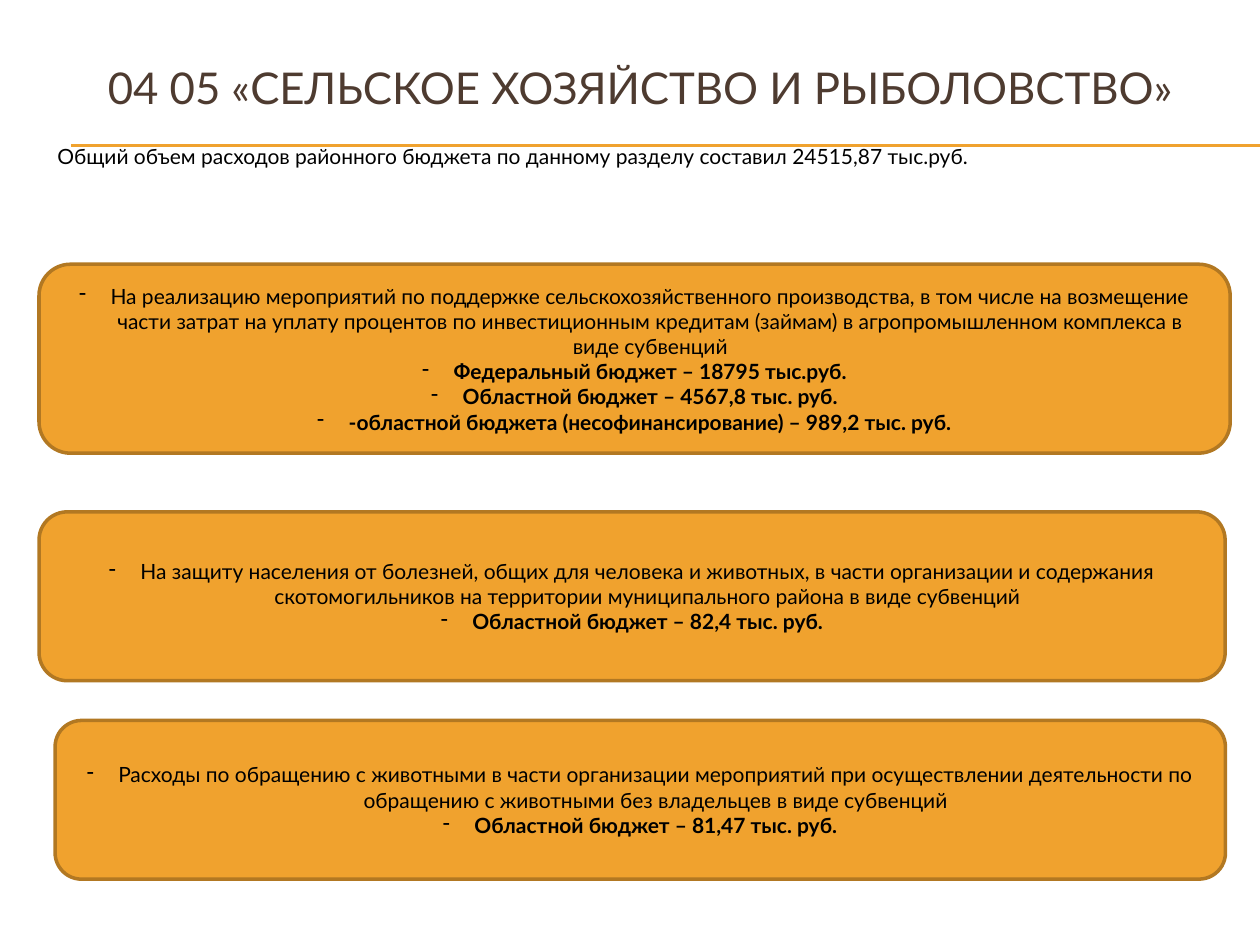
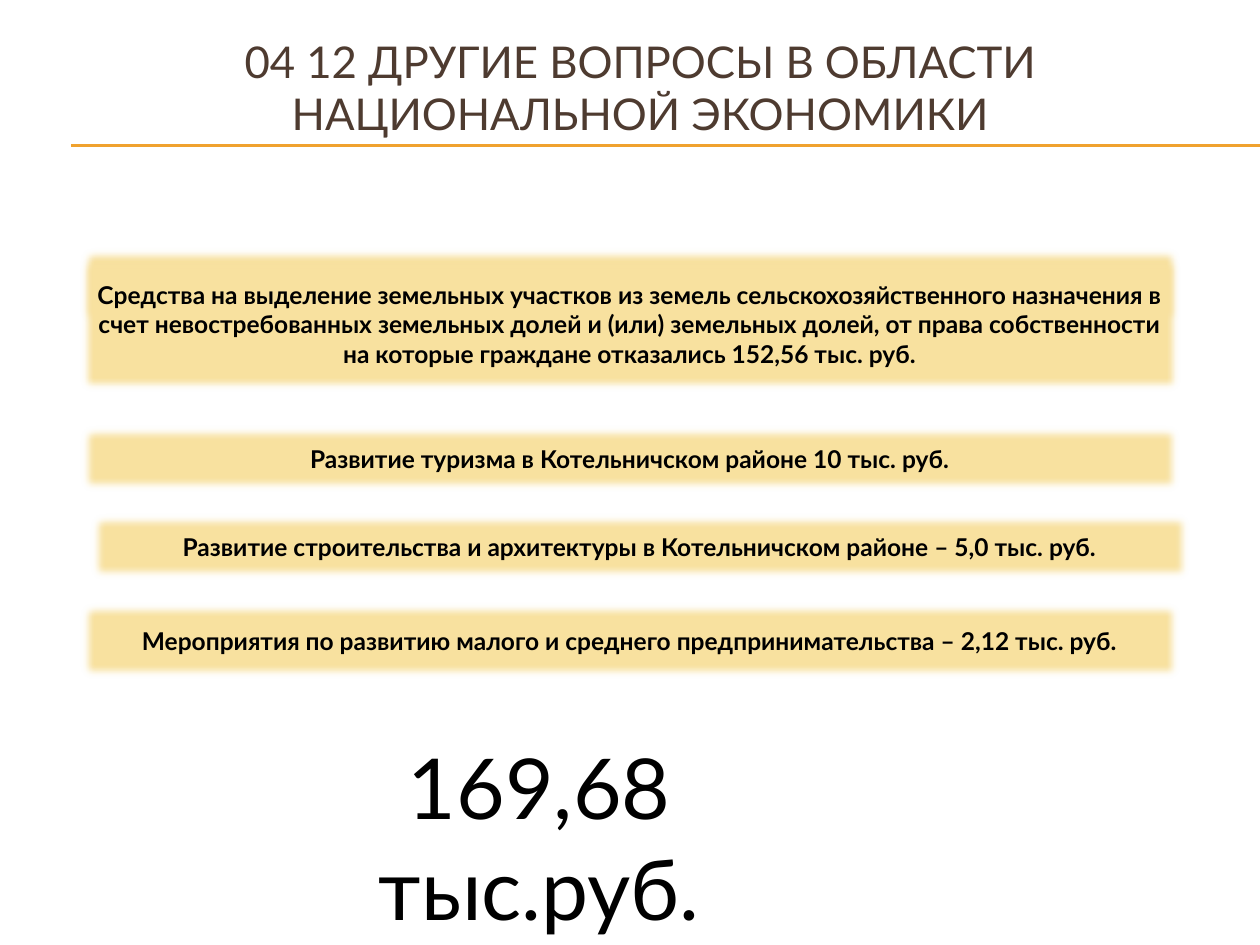
from dataclasses import dataclass

from lxml.etree import SubElement
from pptx import Presentation
from pptx.dml.color import RGBColor
from pptx.enum.shapes import MSO_CONNECTOR, MSO_SHAPE
from pptx.enum.text import MSO_ANCHOR, PP_ALIGN
from pptx.oxml.ns import qn
from pptx.util import Pt

FONT = "Lato"
BLACK, BROWN = "000000", "4E3B30"
AMBER, DARK_AMBER, SAND = "F0A22E", "B27822", "F8E19F"
SLIDE_W, SLIDE_H = 720, 540
RULE_LEFT, RULE_TOPS = 40.5, (82.8, 83.5)
TITLE_BOX = (23.8, 16.6, 684, 66.2)
BULLET_INDENT = 18
SOFT_EDGE = 5


@dataclass
class Card:
    """Rounded card: an expense item and the budgets that pay for it."""
    box: tuple[float, float, float, float]
    purpose: str
    budgets: list[str]


@dataclass
class Strip:
    """Soft-edged strip with one bold line of text."""
    left: float
    top: float
    height: float
    text: str = ""
    width: float = 630


CARDS = [
    Card((22.3, 151, 680.7, 108),
         "На реализацию мероприятий по поддержке сельскохозяйственного производства, "
         "в том числе на возмещение части затрат на уплату процентов по инвестиционным "
         "кредитам (займам) в агропромышленном комплекса в виде субвенций",
         ["Федеральный бюджет – 18795 тыс.руб.",
          "Областной бюджет – 4567,8 тыс. руб.",
          "-областной бюджета (несофинансирование) – 989,2 тыс. руб."]),
    Card((22.3, 292.5, 677.8, 96.5),
         "На защиту населения от болезней, общих для человека и животных, в части "
         "организации и содержания скотомогильников на территории муниципального "
         "района в виде субвенций",
         ["Областной бюджет – 82,4 тыс. руб."]),
    Card((31.5, 411.7, 668.8, 90.7),
         "Расходы по обращению с животными в части организации мероприятий при "
         "осуществлении деятельности по обращению с животными без владельцев в виде "
         "субвенций",
         ["Областной бюджет – 81,47 тыс. руб."]),
]

STRIPS = [
    Strip(44.9, 140.6, 45.2),
    Strip(50.6, 292.3, 39.7,
          "Развитие строительства и архитектуры в Котельничском районе – 5,0 тыс. руб."),
    Strip(44.9, 343.6, 45.2,
          "Мероприятия по развитию малого и среднего предпринимательства – 2,12 тыс. руб."),
    Strip(44.9, 242, 39.7, "Развитие туризма в Котельничском районе 10 тыс. руб."),
    Strip(44.9, 146, 78.5,
          "Средства на выделение земельных участков из земель сельскохозяйственного "
          "назначения в счет невостребованных земельных долей и (или) земельных долей, "
          "от права собственности на которые граждане отказались 152,56 тыс. руб."),
]


def rgb(color: str) -> RGBColor:
    return RGBColor.from_string(color)


def write(p, text: str, size: float, color: str = BLACK, bold: bool = False,
          align=PP_ALIGN.CENTER) -> None:
    p.alignment = align
    r = p.add_run()
    r.text = text
    for name, value in {"name": FONT, "size": Pt(size), "bold": bold}.items():
        setattr(r.font, name, value)
    r.font.color.rgb = rgb(color)


def add_bullet(p) -> None:
    pPr = p._p.get_or_add_pPr()
    pPr.set("marL", str(Pt(BULLET_INDENT)))
    pPr.set("indent", str(-Pt(BULLET_INDENT)))
    SubElement(pPr, qn("a:buFontTx"))
    SubElement(pPr, qn("a:buChar"), char="-")


def add_text(s, box, text: str, size: float, anchor=MSO_ANCHOR.MIDDLE, **style):
    tf = s.shapes.add_textbox(*map(Pt, box)).text_frame
    tf.word_wrap = True
    tf.vertical_anchor = anchor
    write(tf.paragraphs[0], text, size, **style)
    return tf.paragraphs[0]


def add_box(s, kind, box, fill: str, line_width: float):
    sp = s.shapes.add_shape(kind, *map(Pt, box))
    sp.shadow.inherit = False
    sp.fill.solid()
    sp.fill.fore_color.rgb = rgb(fill)
    sp.line.color.rgb = rgb(DARK_AMBER)
    sp.line.width = Pt(line_width)
    sp.text_frame.word_wrap = True
    sp.text_frame.vertical_anchor = MSO_ANCHOR.MIDDLE
    return sp


def add_card(s, card: Card) -> None:
    tf = add_box(s, MSO_SHAPE.ROUNDED_RECTANGLE, card.box, AMBER, 2).text_frame
    for i, text in enumerate([card.purpose, *card.budgets]):
        p = tf.add_paragraph() if i else tf.paragraphs[0]
        add_bullet(p)
        write(p, text, 12, bold=i > 0)


def add_strip(s, strip: Strip) -> None:
    box = (strip.left, strip.top, strip.width, strip.height)
    sp = add_box(s, MSO_SHAPE.RECTANGLE, box, SAND, 0.25)
    effects = sp._element.spPr.find(qn("a:effectLst"))
    SubElement(effects, qn("a:softEdge"), rad=str(Pt(SOFT_EDGE)))
    if strip.text:
        write(sp.text_frame.paragraphs[0], strip.text, 14, bold=True)


def add_titled_slide(prs, title: str):
    """Blank slide with the double rule and the title above it."""
    s = prs.slides.add_slide(prs.slide_layouts[6])
    for top in RULE_TOPS:
        rule = s.shapes.add_connector(MSO_CONNECTOR.STRAIGHT, Pt(RULE_LEFT), Pt(top),
                                      Pt(SLIDE_W), Pt(top))
        rule.line.color.rgb = rgb(AMBER)
        rule.line.width = Pt(0.75)
        SubElement(rule._element.spPr, qn("a:effectLst"))
    add_text(s, TITLE_BOX, title, 25, color=BROWN)
    return s


def main() -> None:
    prs = Presentation()
    prs.slide_width, prs.slide_height = Pt(SLIDE_W), Pt(SLIDE_H)

    # Agriculture: total and expense cards
    s = add_titled_slide(prs, "04 05 «СЕЛЬСКОЕ ХОЗЯЙСТВО И РЫБОЛОВСТВО»")
    p = add_text(s, (11.5, 78.5, 697.7, 21.6),
                 "Общий объем расходов районного бюджета по данному разделу "
                 "составил 24515,87 тыс.руб.", 12, align=PP_ALIGN.JUSTIFY)
    p._p.get_or_add_pPr().set("indent", str(Pt(14.2)))
    for card in CARDS:
        add_card(s, card)

    # Other economic matters: strips and their total
    s = add_titled_slide(prs, "04 12 ДРУГИЕ ВОПРОСЫ В ОБЛАСТИ НАЦИОНАЛЬНОЙ ЭКОНОМИКИ")
    for strip in STRIPS:
        add_strip(s, strip)
    add_text(s, (134.6, 417, 347, 65.5), "169,68 тыс.руб.", 48, anchor=MSO_ANCHOR.TOP)

    prs.save("out.pptx")


if __name__ == "__main__":
    main()
